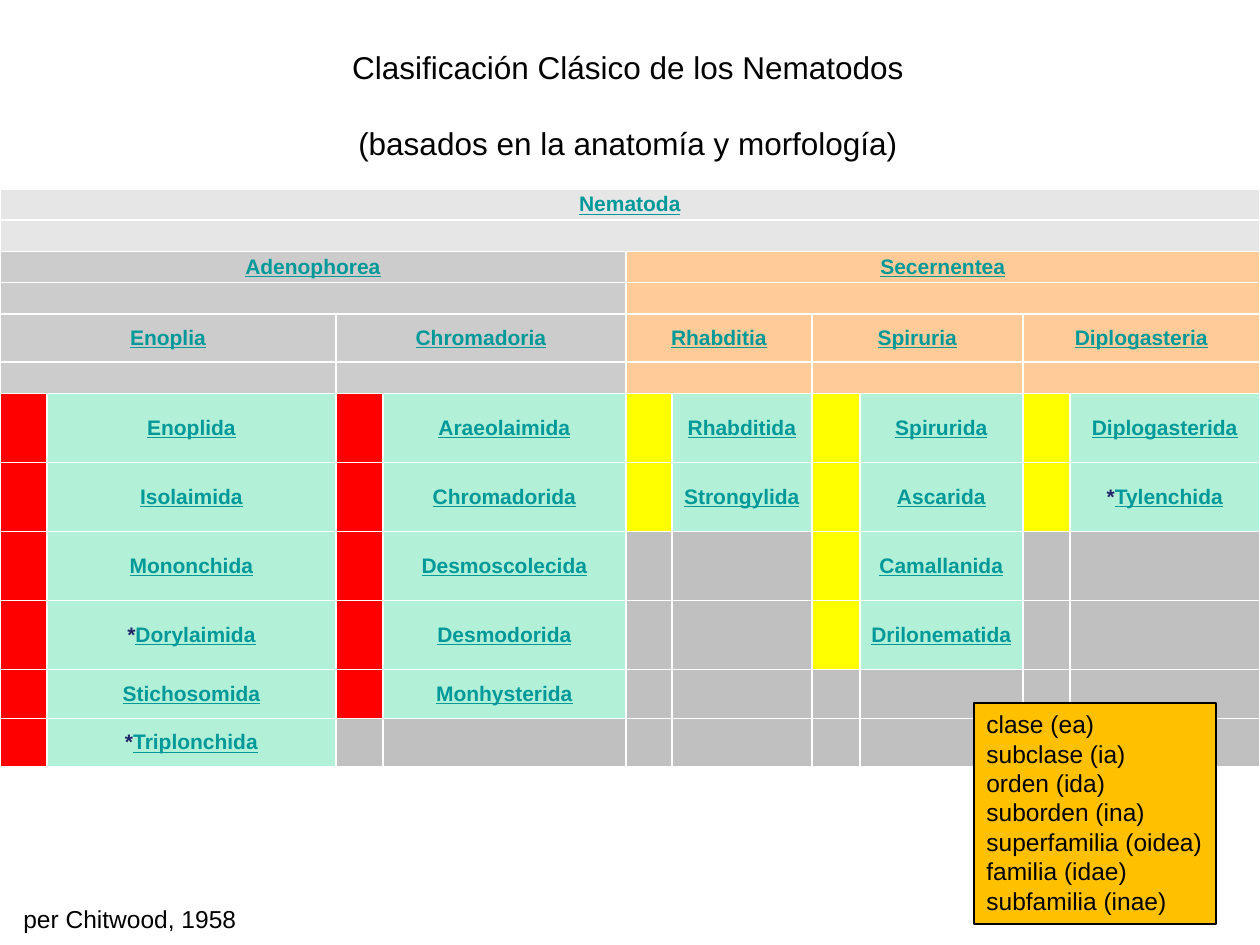
from itertools import accumulate

from pptx import Presentation
from pptx.dml.color import RGBColor
from pptx.enum.shapes import MSO_SHAPE
from pptx.enum.text import MSO_ANCHOR, MSO_AUTO_SIZE, PP_ALIGN
from pptx.util import Pt

RECTANGLE = MSO_SHAPE.RECTANGLE
MIDDLE, TOP = MSO_ANCHOR.MIDDLE, MSO_ANCHOR.TOP
FIT_SHAPE = MSO_AUTO_SIZE.SHAPE_TO_FIT_TEXT
CENTER, LEFT = PP_ALIGN.CENTER, PP_ALIGN.LEFT

PX = 914400 / 126

THEME = {
    "font": "Arial",
    "title_size": 18, "note_size": 14, "taxon_size": 12,
    "text": "000000", "taxon": "009999", "asterisk": "222267",
    "phylum": "E6E6E6", "order": "B2F0D8", "unused": "C0C0C0", "legend": "FFC000",
}

# class, fill, fill of the strip beside its orders, {subclass: orders}
CLASSES = [
    ("Adenophorea", "CCCCCC", "FF0000", {
        "Enoplia": ["Enoplida", "Isolaimida", "Mononchida", "*Dorylaimida",
                    "Stichosomida", "*Triplonchida"],
        "Chromadoria": ["Araeolaimida", "Chromadorida", "Desmoscolecida",
                        "Desmodorida", "Monhysterida"],
    }),
    ("Secernentea", "FFCC99", "FFFF00", {
        "Rhabditia": ["Rhabditida", "Strongylida"],
        "Spiruria": ["Spirurida", "Ascarida", "Camallanida", "Drilonematida"],
        "Diplogasteria": ["Diplogasterida", "*Tylenchida"],
    }),
]
COLUMN_WIDTHS = [47, 289, 47, 243, 46, 140, 48, 163, 47, 190]
ROW_HEIGHTS = [31, 30, 31, 30, 48, 31, 69, 69, 69, 69, 49, 48]
PHYLUM_ROW, CLASS_ROW, SUBCLASS_ROW, FIRST_ORDER_ROW = 0, 2, 4, 6
CELL_FORMAT = {
    "vertical_anchor": MIDDLE,
    "margin_left": round(6 * PX), "margin_right": round(6 * PX),
    "margin_top": round(3 * PX), "margin_bottom": round(3 * PX),
}


def fill_cell(row, column, color, taxon="", span=1):
    cell = table.cell(row, column)
    if span > 1:
        cell.merge(table.cell(row, column + span - 1))
    cell.fill.solid()
    cell.fill.fore_color.rgb = RGBColor.from_string(color)
    for name, value in CELL_FORMAT.items():
        setattr(cell, name, value)
    paragraph = cell.text_frame.paragraphs[0]
    paragraph.alignment = CENTER
    if not taxon:
        # Keeps the height of an empty row from growing
        end = paragraph._p.get_or_add_endParaRPr()
        end.set("sz", str(THEME["taxon_size"] * 100))
    name = taxon.lstrip("*")
    for text, tone, underline in (("*" if name != taxon else "", "asterisk", False),
                                  (name, "taxon", True)):
        if text:
            run = paragraph.add_run()
            run.text = text
            run.font.color.rgb = RGBColor.from_string(THEME[tone])
            for key, value in {"name": THEME["font"], "size": Pt(THEME["taxon_size"]),
                               "bold": True, "underline": underline}.items():
                setattr(run.font, key, value)


def write_lines(shape, lines, size, alignment=LEFT, gap=0):
    """Write one paragraph per line, with gap points between them."""
    frame = shape.text_frame
    for key, value in {"word_wrap": False, "auto_size": FIT_SHAPE,
                       "vertical_anchor": TOP}.items():
        setattr(frame, key, value)
    for index, line in enumerate(lines):
        paragraph = frame.add_paragraph() if index else frame.paragraphs[0]
        paragraph.alignment = alignment
        if index and gap:
            paragraph.space_before = Pt(gap)
        run = paragraph.add_run()
        run.text = line
        run.font.name = THEME["font"]
        run.font.size = Pt(size)
        run.font.color.rgb = RGBColor.from_string(THEME["text"])


presentation = Presentation()
presentation.slide_width = round(1260 * PX)
presentation.slide_height = round(945 * PX)
slide = presentation.slides.add_slide(presentation.slide_layouts[6])

# Classification table
table = slide.shapes.add_table(
    len(ROW_HEIGHTS), len(COLUMN_WIDTHS), 0, round(189 * PX),
    round(sum(COLUMN_WIDTHS) * PX), round(sum(ROW_HEIGHTS) * PX)).table
table.first_row = table.horz_banding = False
for column, width in zip(table.columns, COLUMN_WIDTHS):
    column.width = round(width * PX)
for row, height in zip(table.rows, ROW_HEIGHTS):
    row.height = round(height * PX)

# Each heading has an empty row of the same fill below it
headings = [(PHYLUM_ROW, 0, THEME["phylum"], "Nematoda", len(COLUMN_WIDTHS))]
class_spans = [2 * len(subclasses) for *_, subclasses in CLASSES]
class_starts = accumulate(class_spans, initial=0)
for (class_name, fill, strip, subclasses), start, span in zip(
        CLASSES, class_starts, class_spans):
    headings.append((CLASS_ROW, start, fill, class_name, span))
    for position, (subclass, orders) in enumerate(subclasses.items()):
        column = start + 2 * position
        headings.append((SUBCLASS_ROW, column, fill, subclass, 2))
        for row in range(FIRST_ORDER_ROW, len(ROW_HEIGHTS)):
            rank = row - FIRST_ORDER_ROW
            if rank < len(orders):
                fill_cell(row, column, strip)
                fill_cell(row, column + 1, THEME["order"], orders[rank])
            else:
                fill_cell(row, column, THEME["unused"])
                fill_cell(row, column + 1, THEME["unused"])
for row, column, fill, taxon, span in headings:
    fill_cell(row, column, fill, taxon, span)
    fill_cell(row + 1, column, fill, span=span)

# Title
title = slide.shapes.add_textbox(*(round(v * PX) for v in (337, 42, 582, 127)))
write_lines(title, ["Clasificación Clásico de los Nematodos",
                    "(basados en la anatomía y morfología)"],
            THEME["title_size"], CENTER, gap=22)

# Legend of rank endings
legend = slide.shapes.add_shape(
    RECTANGLE, *(round(v * PX) for v in (974, 703, 242, 221)))
legend.shadow.inherit = False
legend.fill.solid()
legend.fill.fore_color.rgb = RGBColor.from_string(THEME["legend"])
legend.line.color.rgb = RGBColor.from_string(THEME["text"])
legend.line.width = Pt(1)
write_lines(legend, ["clase (ea)", "subclase (ia)", "orden (ida)", "suborden (ina)",
                     "superfamilia (oidea)", "familia (idae)", "subfamilia (inae)"],
            THEME["note_size"])

# Source of the classification
citation = slide.shapes.add_textbox(*(round(v * PX) for v in (11, 898, 242, 43)))
write_lines(citation, ["per Chitwood, 1958"], THEME["note_size"])

presentation.save("out.pptx")
